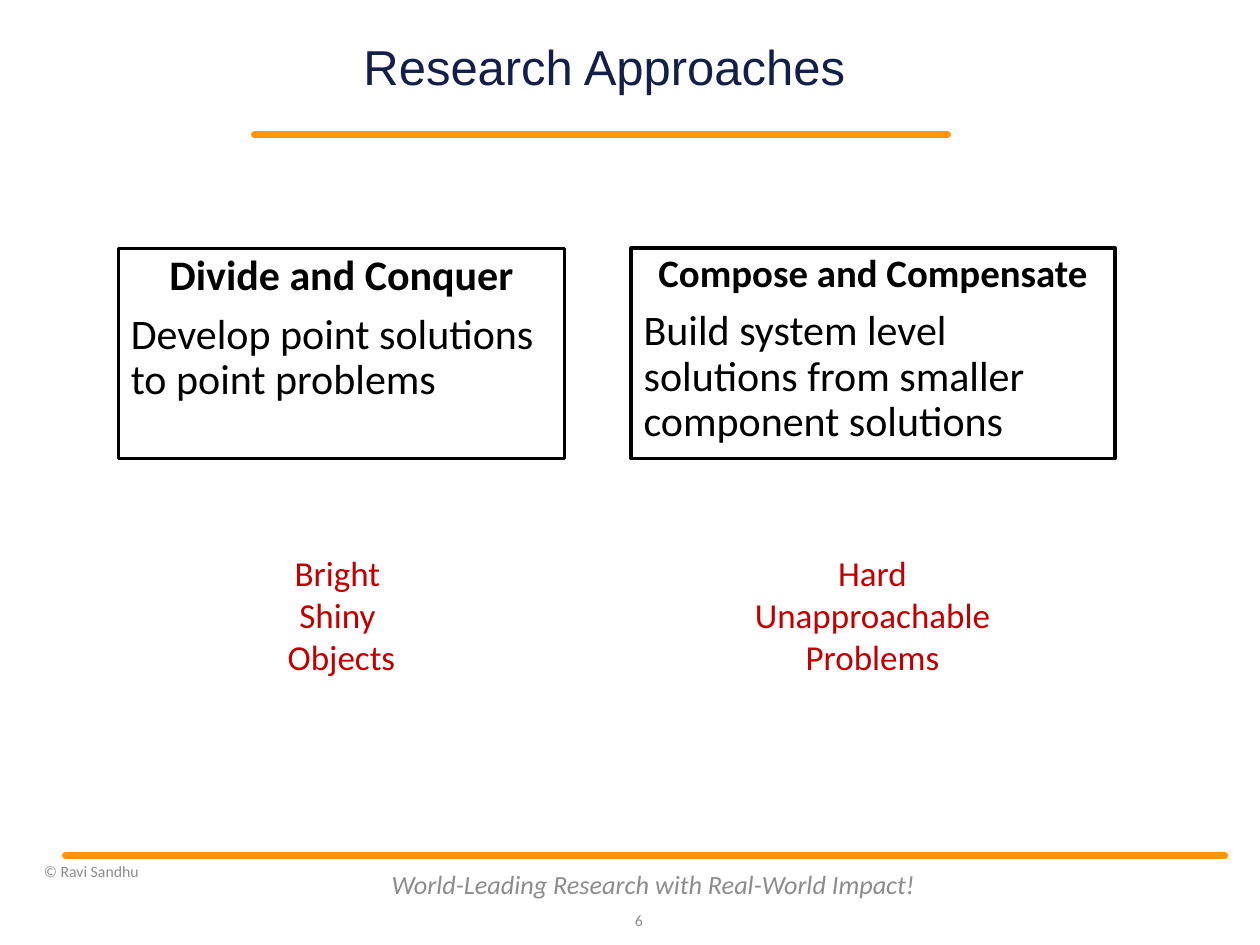
from dataclasses import dataclass

import lxml.etree
import pptx
import pptx.dml.color
import pptx.enum.shapes
import pptx.enum.text
import pptx.oxml.ns
import pptx.util

Inches = pptx.util.Inches
Pt = pptx.util.Pt
ALIGN = pptx.enum.text.PP_ALIGN
ANCHOR = pptx.enum.text.MSO_ANCHOR
qn = pptx.oxml.ns.qn


@dataclass(frozen=True)
class Theme:
    heading_font: str = "Arial"
    body_font: str = "Calibri"
    navy: str = "131F49"
    orange: str = "FF950E"
    black: str = "000000"
    red: str = "C00000"
    gray: str = "8C8C8C"
    title: float = 28
    body: float = 24
    remark: float = 20
    motto: float = 15
    small: float = 9
    rule: float = 4


def rgb(value):
    return pptx.dml.color.RGBColor.from_string(value)


def write(paragraph, text, *, font, size, color, bold=False, italic=False,
          align=ALIGN.LEFT, line_spacing=1.0, before=0):
    """Put text in a paragraph with the given format."""
    paragraph.alignment = align
    paragraph.line_spacing = line_spacing
    paragraph.space_before = Pt(before)
    run = paragraph.add_run()
    run.text = text
    run.font.name = font
    run.font.size = Pt(size)
    run.font.color.rgb = rgb(color)
    run.font.bold = bold
    run.font.italic = italic


class SlideBuilder:
    def __init__(self, slide, theme):
        self.shapes = slide.shapes
        self.theme = theme

    def rule(self, left, right, y):
        """Horizontal line with round ends."""
        line = self.shapes.add_connector(
            pptx.enum.shapes.MSO_CONNECTOR.STRAIGHT,
            Inches(left), Inches(y), Inches(right), Inches(y))
        line.line.color.rgb = rgb(self.theme.orange)
        line.line.width = Pt(self.theme.rule)
        properties = line.element.spPr
        properties.find(qn("a:ln")).set("cap", "rnd")
        lxml.etree.SubElement(properties, qn("a:effectLst"))

    def label(self, lines, left, top, width, height, *, anchor=ANCHOR.TOP,
              inset=None, **text_format):
        """Plain text, one paragraph for each line."""
        box = self.shapes.add_textbox(
            Inches(left), Inches(top), Inches(width), Inches(height))
        frame = box.text_frame
        frame.word_wrap = True
        frame.vertical_anchor = anchor
        if inset is not None:
            frame.margin_left = frame.margin_right = Inches(inset)
            frame.margin_top = frame.margin_bottom = Inches(inset)
        style = {"font": self.theme.body_font, **text_format}
        for index, line in enumerate(lines):
            paragraph = frame.add_paragraph() if index else frame.paragraphs[0]
            write(paragraph, line, **style)

    def approach(self, heading, description, left, width, border, heading_size):
        """Outlined box with a bold heading over a description."""
        box = self.shapes.add_shape(
            pptx.enum.shapes.MSO_SHAPE.RECTANGLE,
            Inches(left), Inches(1.97), Inches(width), Inches(1.67))
        box.shadow.inherit = False
        box.fill.background()
        box.line.color.rgb = rgb(self.theme.black)
        box.line.width = Pt(border)
        frame = box.text_frame
        frame.word_wrap = True
        frame.vertical_anchor = ANCHOR.TOP
        style = dict(font=self.theme.body_font, color=self.theme.black,
                     line_spacing=0.9)
        write(frame.paragraphs[0], heading, size=heading_size, bold=True,
              align=ALIGN.CENTER, **style)
        write(frame.add_paragraph(), description, size=self.theme.body,
              before=7.5, **style)


def main():
    theme = Theme()
    deck = pptx.Presentation()
    deck.slide_width, deck.slide_height = Inches(10), Inches(7.5)
    builder = SlideBuilder(deck.slides.add_slide(deck.slide_layouts[6]), theme)

    # Title and rules
    builder.rule(2.02, 7.52, 1.07)
    builder.rule(0.52, 9.72, 6.79)
    builder.label(["Research Approaches"], 2.17, 0.3, 5.25, 0.51,
                  anchor=ANCHOR.MIDDLE, inset=0, font=theme.heading_font,
                  size=theme.title, color=theme.navy, align=ALIGN.CENTER,
                  line_spacing=0.9)

    # The two approaches
    builder.approach("Divide and Conquer",
                     "Develop point solutions to point problems",
                     0.94, 3.54, border=1.75, heading_size=24)
    builder.approach("Compose and Compensate",
                     "Build system level solutions from smaller component solutions",
                     5.01, 3.84, border=2, heading_size=22.2)

    # What each approach deals with
    remark = dict(size=theme.remark, color=theme.red, align=ALIGN.CENTER)
    builder.label(["Bright ", "Shiny ", "Objects"],
                  1.65, 4.33, 2.12, 1.11, **remark)
    builder.label(["Hard Unapproachable Problems"],
                  5.78, 4.33, 2.29, 1.11, **remark)

    # Footer
    builder.label(["© Ravi Sandhu"], 0.25, 6.79, 2.75, 0.36,
                  size=theme.small, color=theme.gray)
    builder.label(["World-Leading Research with Real-World Impact!"],
                  3, 6.82, 4.37, 0.4, anchor=ANCHOR.MIDDLE, size=theme.motto,
                  color=theme.gray, italic=True, align=ALIGN.CENTER)
    builder.label(["6"], 4.8, 7.1, 0.4, 0.4, anchor=ANCHOR.MIDDLE,
                  size=theme.small, color=theme.gray, align=ALIGN.RIGHT)

    deck.save("out.pptx")


if __name__ == "__main__":
    main()
